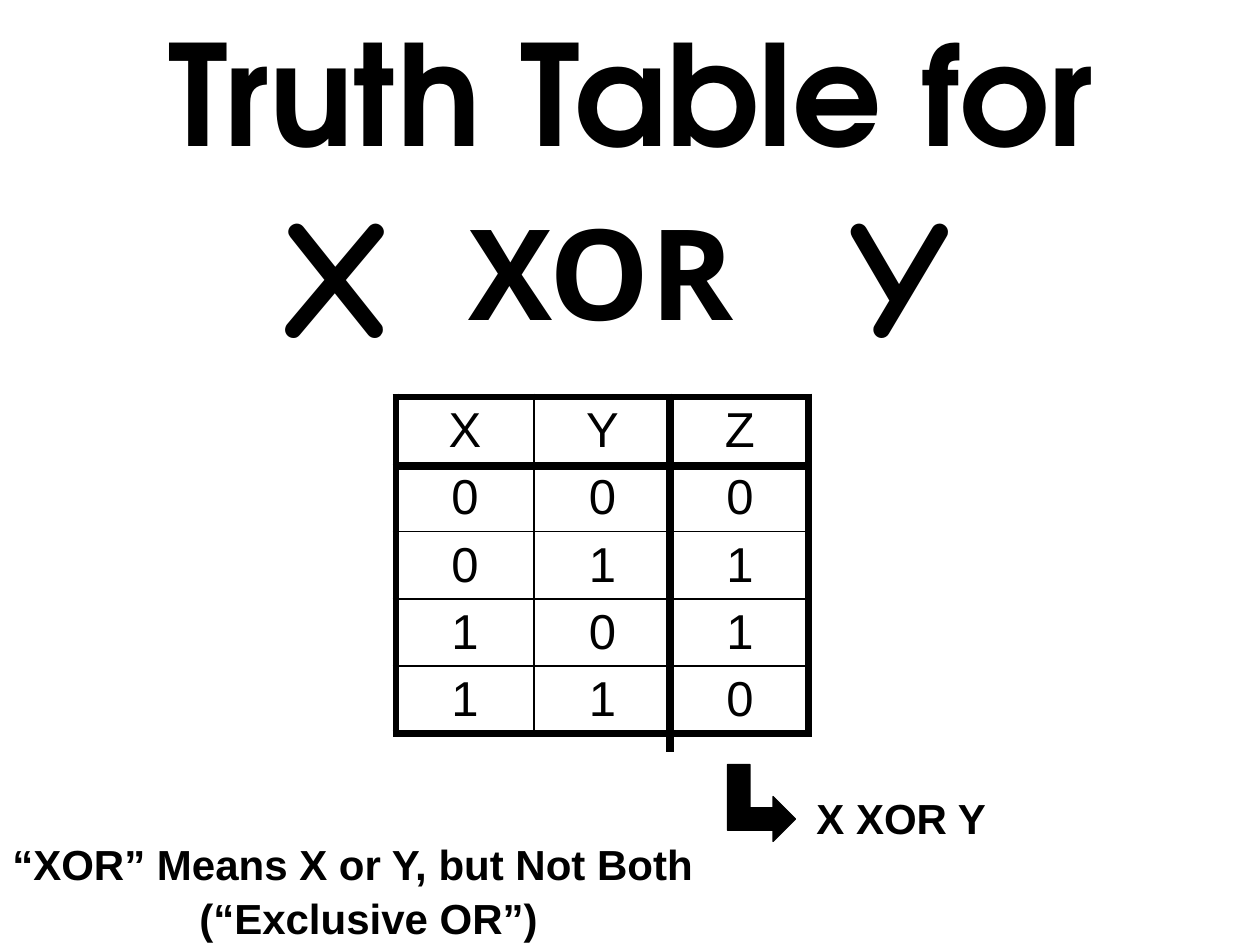
"""Build the truth table slide for XOR."""
from lxml import etree
from pptx import Presentation
from pptx import util as u
from pptx.dml.color import RGBColor
from pptx.enum import shapes, text
from pptx.oxml.ns import qn

PX = 914400 / 126
BLACK = "000000"
THIN, THICK = 1, 4.5

# box, lines as (wording, left indent), format
TEXTS = [
    ((48, 0, 1167, 180), [("Truth Table for", 0)],
     dict(font="TeX Gyre Adventor", size=80, align=text.PP_ALIGN.CENTER, wrap=True)),
    ((265, 163, 147, 214), [("X", 0)], dict(font="Comic Neue", size=96)),
    ((838, 163, 132, 214), [("Y", 0)], dict(font="Comic Neue", size=96)),
    ((456, 188, 300, 164), [("XOR", 0)], dict(font="Noto Sans", size=72)),
    ((804, 786, 195, 63), [("X XOR Y", 0)], dict(size=24, before=2)),
    ((0, 832, 1260, 113), [("“XOR” Means X or Y, but Not Both", 0), ("(“Exclusive OR”)", 187)],
     dict(size=24, before=2, wrap=True)),
]
ROWS = ["XYZ", "000", "011", "101", "110"]
TABLE_LEFT, TABLE_TOP, ROW_HEIGHT = 396, 397, 67
COLUMNS = [138, 137, 138]
DIVIDERS = [((670, 398), (670, 752)), ((396, 466), (811, 466))]
ARROW = (723, 769, 77, 68)


def px(value):
    return u.Emu(round(value * PX))


def color(value):
    return RGBColor.from_string(value)


def write(frame, lines, font="Arial", size=28, bold=True, align=text.PP_ALIGN.LEFT,
          before=0, wrap=False):
    frame.word_wrap = wrap
    for index, (wording, indent) in enumerate(lines):
        paragraph = frame.paragraphs[0] if index == 0 else frame.add_paragraph()
        paragraph.alignment = align
        paragraph.space_before = u.Pt(before)
        if indent:
            paragraph._p.get_or_add_pPr().set("marL", str(px(indent)))
        run = paragraph.add_run()
        run.text = wording
        run.font.name, run.font.size, run.font.bold = font, u.Pt(size), bold
        run.font.color.rgb = color(BLACK)


def add_text(slide, box, lines, **style):
    frame = slide.shapes.add_textbox(*map(px, box)).text_frame
    write(frame, lines, **style)
    frame.auto_size = text.MSO_AUTO_SIZE.SHAPE_TO_FIT_TEXT


def set_borders(cell, widths):
    properties = cell._tc.get_or_add_tcPr()
    for index, (side, width) in enumerate(zip("LRTB", widths)):
        line = etree.Element(qn(f"a:ln{side}"), w=str(u.Pt(width)))
        fill = etree.SubElement(line, qn("a:solidFill"))
        etree.SubElement(fill, qn("a:srgbClr"), val=BLACK)
        properties.insert(index, line)


def add_truth_table(slide):
    last_row, last_column = len(ROWS) - 1, len(COLUMNS) - 1
    table = slide.shapes.add_table(
        len(ROWS), len(COLUMNS), px(TABLE_LEFT), px(TABLE_TOP),
        px(sum(COLUMNS)), px(ROW_HEIGHT * len(ROWS))).table
    table.first_row = table.horz_banding = False
    for column, width in zip(table.columns, COLUMNS):
        column.width = px(width)
    for r, values in enumerate(ROWS):
        table.rows[r].height = px(ROW_HEIGHT)
        for c, value in enumerate(values):
            cell = table.cell(r, c)
            cell.fill.background()
            write(cell.text_frame, [(value, 0)], bold=False,
                  align=text.PP_ALIGN.CENTER, wrap=True)
            outer = (c == 0, c == last_column, r == 0, r == last_row)
            set_borders(cell, [THICK if edge else THIN for edge in outer])


def add_divider(slide, start, end):
    line = slide.shapes.add_connector(
        shapes.MSO_CONNECTOR.STRAIGHT, *map(px, start + end))
    line.line.color.rgb = color(BLACK)
    line.line.width = u.Pt(THICK)
    etree.SubElement(line._element.spPr, qn("a:effectLst"))


def add_arrow(slide):
    arrow = slide.shapes.add_shape(shapes.MSO_SHAPE.BENT_UP_ARROW, *map(px, ARROW))
    arrow.rotation = 90
    for index in range(3):
        arrow.adjustments[index] = 0.33
    arrow.shadow.inherit = False
    arrow.fill.solid()
    arrow.fill.fore_color.rgb = color(BLACK)
    arrow.line.color.rgb = color(BLACK)
    arrow.line.width = u.Pt(0.75)


def main():
    presentation = Presentation()
    presentation.slide_width, presentation.slide_height = px(1260), px(945)
    slide = presentation.slides.add_slide(presentation.slide_layouts[6])
    add_truth_table(slide)
    for start, end in DIVIDERS:
        add_divider(slide, start, end)
    add_arrow(slide)
    for box, lines, style in TEXTS:
        add_text(slide, box, lines, **style)
    presentation.save("out.pptx")


if __name__ == "__main__":
    main()
